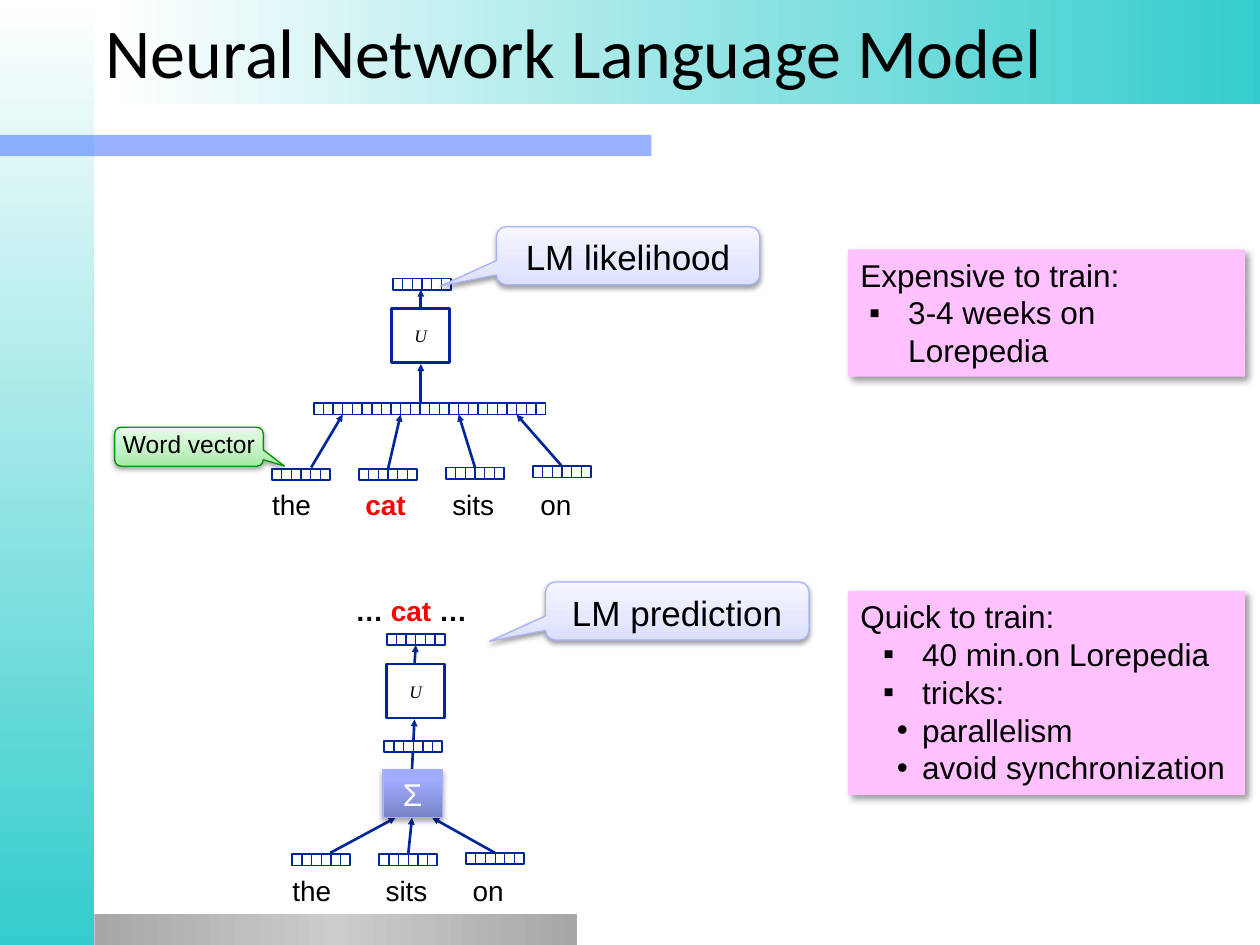
from lxml.etree import SubElement
from pptx import Presentation
from pptx.dml.color import RGBColor
from pptx.enum.shapes import MSO_CONNECTOR, MSO_SHAPE
from pptx.enum.text import MSO_ANCHOR, MSO_AUTO_SIZE, PP_ALIGN
from pptx.oxml import parse_xml
from pptx.oxml.ns import nsdecls, qn
from pptx.util import Inches, Pt

NAVY, WHITE, BLACK, RED = "002699", "FFFFFF", "000000", "FF0000"
PINK, LILAC, GREEN = "FFC1FF", "A7B2FB", "009600"
VECTOR_W, VECTOR_H, CELLS = 0.46, 0.09, 6

# Gradients: stops (percent, colour) and clockwise angle
TEAL = [(0, WHITE), (100, "33CCCC")]
GREY = [(0, "A7A7A7"), (50, "CCCCCC"), (100, "A7A7A7")]
LILAC_FADE = ([(0, "DBDFFF"), (35, "E5E8FF"), (100, "F5F6FF")], 270)
GREEN_FADE = ([(0, "A5EBA5"), (35, "C1F0C1"), (100, "E7FAE7")], 270)
SIGMA_FADE = ([(0, "7883C7"), (80, "A0ACFF"), (100, "A2AEFF")], 270)

# Shadows: opacity %, blur pt, distance pt, direction
CALLOUT_SHADOW = (38, 3.1, 1.6, 90)
SIGMA_SHADOW = (35, 3.1, 1.8, 90)
NOTE_SHADOW = (40, 4, 3, 45)

BARS = [
    ((0, 0, 0.75, 7.5), (TEAL, 90)),
    ((0, 1.07, 5.17, 0.17), "3366FF"),
    ((0.75, 7.25, 3.83, 0.25), (GREY, 0)),
    ((0.88, 0, 9.16, 0.83), (TEAL, 0)),
]
ARROWS = [
    # likelihood network
    (2.47, 3.71, 2.72, 3.29), (3.08, 3.72, 3.18, 3.29),
    (3.77, 3.71, 3.64, 3.29), (4.46, 3.7, 4.1, 3.29),
    (3.34, 3.2, 3.34, 2.89), (3.34, 2.45, 3.34, 2.3),
    # prediction network
    (2.62, 6.77, 3.14, 6.49), (3.24, 6.78, 3.27, 6.49),
    (3.93, 6.77, 3.43, 6.49), (3.27, 6.11, 3.29, 5.71),
    (3.29, 5.27, 3.3, 5.12),
]
OUTPUT_VECTORS = [(3.12, 2.21), (3.07, 5.03)]
VECTORS = [
    (2.16, 3.72), (2.85, 3.72), (3.54, 3.71), (4.23, 3.7),
    *[(2.49 + VECTOR_W * i, 3.2) for i in range(4)],
    (3.05, 5.88),
    (2.32, 6.78), (3.01, 6.78), (3.7, 6.77),
]
U_BOXES = [(3.11, 2.45), (3.07, 5.27)]
WORD_TABS = [0.74, 1.43, 2.13]
WORDS = [  # box, runs (text, colour, bold)
    ((2.16, 3.87, 2.6, 0.27),
     [("the\t", BLACK, False), ("cat", RED, True), ("\tsits\ton", BLACK, False)]),
    ((2.32, 6.93, 1.98, 0.27), [("the\tsits\ton", BLACK, False)]),
    ((2.82, 4.71, 0.96, 0.27),
     [("…", BLACK, True), (" cat", RED, True), (" …", BLACK, True)]),
]
CALLOUTS = [  # box, text, size, gradient, line, tip, inset
    ((3.94, 1.8, 2.09, 0.46), "LM likelihood", 20, LILAC_FADE, LILAC, (-0.712, 0.521), None),
    ((4.33, 4.62, 2.09, 0.46), "LM prediction", 20, LILAC_FADE, LILAC, (-0.712, 0.521), None),
    ((0.91, 3.39, 1.18, 0.31), "Word vector", 14, GREEN_FADE, GREEN, (0.641, 0.495), (0, 0)),
]
NOTES = [  # box, heading, bullets (level, left, hanging, mark, text)
    ((6.73, 1.98, 3.15, 1.01), "Expensive to train:",
     [(1, 0.38, 0.31, "▪", "3-4 weeks on Lorepedia")]),
    ((6.73, 4.69, 3.15, 1.62), "Quick to train:",
     [(1, 0.49, 0.31, "▪", "40 min.on Lorepedia"),
      (1, 0.49, 0.31, "▪", "tricks:"),
      (2, 0.49, 0.2, "•", "parallelism"),
      (2, 0.49, 0.2, "•", "avoid synchronization")]),
]


def rgb(color):
    return RGBColor.from_string(color)


def paint(s, fill):
    """Fill with a hex colour, a (stops, angle) gradient, or nothing."""
    if isinstance(fill, str):
        s.fill.solid()
        s.fill.fore_color.rgb = rgb(fill)
        return
    s.fill.background()
    if fill:
        stops, angle = fill
        gs = "".join(f'<a:gs pos="{pos * 1000}"><a:srgbClr val="{c}"/></a:gs>'
                     for pos, c in stops)
        props = s._element.spPr
        props.replace(props.find(qn("a:noFill")), parse_xml(
            f'<a:gradFill {nsdecls("a")} rotWithShape="1"><a:gsLst>{gs}</a:gsLst>'
            f'<a:lin ang="{angle * 60000}" scaled="0"/></a:gradFill>'))


def add_box(shapes, box, fill=None, line=None, width=1, shadow=None, kind=MSO_SHAPE.RECTANGLE):
    s = shapes.add_shape(kind, *map(Inches, box))
    paint(s, fill)
    if line:
        s.line.color.rgb = rgb(line)
        s.line.width = Pt(width)
    else:
        s.line.fill.background()
    s.shadow.inherit = False
    if shadow:
        alpha, blur, dist, angle = shadow
        s._element.spPr.find(qn("a:effectLst")).append(parse_xml(
            f'<a:outerShdw {nsdecls("a")} blurRad="{Pt(blur)}" dist="{Pt(dist)}" '
            f'dir="{angle * 60000}" algn="tl" rotWithShape="0"><a:srgbClr val="000000">'
            f'<a:alpha val="{alpha * 1000}"/></a:srgbClr></a:outerShdw>'))
    return s


def add_line(shapes, x1, y1, x2, y2, width, arrow=False):
    c = shapes.add_connector(MSO_CONNECTOR.STRAIGHT, *map(Inches, (x1, y1, x2, y2)))
    c.line.color.rgb = rgb(NAVY)
    c.line.width = Pt(width)
    if arrow:
        SubElement(c.line._get_or_add_ln(), qn("a:tailEnd"), type="triangle", w="sm", len="sm")
    SubElement(c._element.spPr, qn("a:effectLst"))


def add_vector(shapes, x, y, fill=None):
    """A strip of cells as one group."""
    cells = shapes.add_group_shape().shapes
    add_box(cells, (x, y, VECTOR_W, VECTOR_H), fill, NAVY)
    for i in range(1, CELLS):
        tick = x + VECTOR_W * i / CELLS
        add_line(cells, tick, y, tick, y + VECTOR_H, 0.75)


def frame(s, inset=None, anchor=MSO_ANCHOR.TOP, grow=False):
    tf = s.text_frame
    tf.word_wrap = True
    tf.vertical_anchor = anchor
    if grow:
        tf.auto_size = MSO_AUTO_SIZE.SHAPE_TO_FIT_TEXT
    if inset:
        tf.margin_left = tf.margin_right = Inches(inset[0])
        tf.margin_top = tf.margin_bottom = Inches(inset[1])
    return tf


def style(p, size, font="Arial", color=BLACK, align=PP_ALIGN.LEFT):
    p.alignment = align
    p.font.size = Pt(size)
    p.font.name = font
    p.font.color.rgb = rgb(color)


def write(tf, text, size, **look):
    p = tf.paragraphs[0]
    p.text = text
    style(p, size, **look)
    return p


prs = Presentation()
prs.slide_width, prs.slide_height = Inches(10), Inches(7.5)
shapes = prs.slides.add_slide(prs.slide_layouts[6]).shapes

bars = [add_box(shapes, box, fill) for box, fill in BARS]
SubElement(bars[1]._element.spPr.find(".//" + qn("a:srgbClr")), qn("a:alpha"), val="50000")

title = shapes.add_textbox(*map(Inches, (0.74, 0, 8.5, 0.8)))
write(frame(title, anchor=MSO_ANCHOR.MIDDLE), "Neural Network Language Model", 40, font="Calibri")

for ends in ARROWS:
    add_line(shapes, *ends, 1.5, arrow=True)
for x, y in OUTPUT_VECTORS:
    add_vector(shapes, x, y)
for x, y in VECTORS:
    add_vector(shapes, x, y, WHITE)

for x, y in U_BOXES:
    s = add_box(shapes, (x, y, 0.46, 0.43), WHITE, NAVY, 1.5)
    p = write(frame(s, anchor=MSO_ANCHOR.MIDDLE), "U", 10,
              font="Times New Roman", align=PP_ALIGN.CENTER)
    p.font.italic = True

sigma = add_box(shapes, (3.04, 6.11, 0.47, 0.38), SIGMA_FADE, LILAC, 0.75, SIGMA_SHADOW)
write(frame(sigma, (0.08, 0.04), MSO_ANCHOR.MIDDLE, grow=True), "Σ", 18,
      color=WHITE, align=PP_ALIGN.CENTER)

for box, runs in WORDS:
    p = frame(shapes.add_textbox(*map(Inches, box)), (0, 0), grow=True).paragraphs[0]
    style(p, 16)
    tabs = "".join(f'<a:tab pos="{Inches(t)}" algn="l"/>' for t in WORD_TABS)
    p._p.get_or_add_pPr().insert(0, parse_xml(f'<a:tabLst {nsdecls("a")}>{tabs}</a:tabLst>'))
    for text, color, bold in runs:
        r = p.add_run()
        r.text = text
        r.font.color.rgb = rgb(color)
        r.font.bold = bold

for box, text, size, fill, line, tip, inset in CALLOUTS:
    s = add_box(shapes, box, fill, line, 0.75, CALLOUT_SHADOW, MSO_SHAPE.ROUNDED_RECTANGULAR_CALLOUT)
    s.adjustments[0], s.adjustments[1] = tip
    write(frame(s, inset), text, size, align=PP_ALIGN.CENTER)

for box, heading, bullets in NOTES:
    tf = frame(add_box(shapes, box, PINK, shadow=NOTE_SHADOW), grow=True)
    write(tf, heading, 18)
    for level, left, hanging, mark, text in bullets:
        p = tf.add_paragraph()
        p.text = text
        p.level = level
        style(p, 18)
        pPr = p._p.get_or_add_pPr()
        pPr.set("marL", str(Inches(left)))
        pPr.set("indent", str(-Inches(hanging)))
        pPr.insert(0, parse_xml(f'<a:buFont {nsdecls("a")} typeface="Arial"/>'))
        pPr.insert(1, parse_xml(f'<a:buChar {nsdecls("a")} char="{mark}"/>'))

prs.save("out.pptx")
